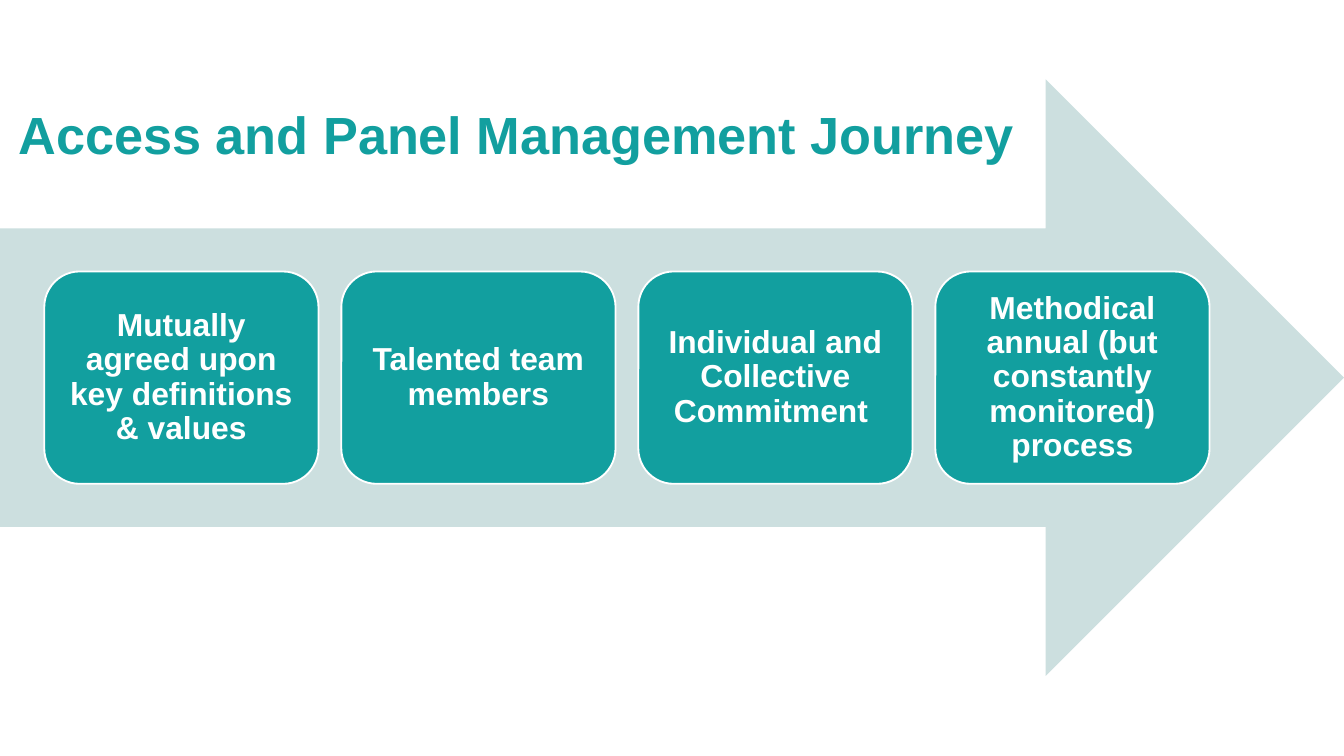
from pptx import Presentation
from pptx.dml.color import RGBColor
from pptx.enum import shapes, text
from pptx.util import Inches, Pt

TEAL = RGBColor(0x12, 0x9F, 0x9F)
PALE_TEAL = RGBColor(0xCC, 0xDF, 0xDF)
WHITE = RGBColor(0xFF, 0xFF, 0xFF)
FONT = "Arial"
SLIDE_WIDTH = 10
SLIDE_HEIGHT = SLIDE_WIDTH * 9 / 16

STEPS = [
    "Mutually agreed upon key definitions & values",
    "Talented team members",
    "Individual and Collective Commitment ",
    "Methodical annual (but constantly monitored) process",
]


def add_bold_run(paragraph, content, size, color):
    run = paragraph.add_run()
    run.text = content
    run.font.name = FONT
    run.font.size = Pt(size)
    run.font.bold = True
    run.font.color.rgb = color


def add_title(slide, left, top, width, height):
    box = slide.shapes.add_textbox(
        Inches(left), Inches(top), Inches(width), Inches(height))
    box.text_frame.word_wrap = True
    add_bold_run(box.text_frame.paragraphs[0],
                 "Access and Panel Management Journey", 28, TEAL)


def add_step(slide, content, left, top, width, height):
    card = slide.shapes.add_shape(
        shapes.MSO_SHAPE.ROUNDED_RECTANGLE,
        Inches(left), Inches(top), Inches(width), Inches(height))
    card.shadow.inherit = False
    card.fill.solid()
    card.fill.fore_color.rgb = TEAL
    card.line.color.rgb = WHITE
    card.line.width = Pt(1)

    frame = card.text_frame
    frame.word_wrap = True
    frame.vertical_anchor = text.MSO_ANCHOR.MIDDLE
    frame.margin_left = frame.margin_right = Inches(0.07)
    frame.margin_top = frame.margin_bottom = Inches(0.07)
    paragraph = frame.paragraphs[0]
    paragraph.alignment = text.PP_ALIGN.CENTER
    paragraph.line_spacing = 0.9
    add_bold_run(paragraph, content, 17, WHITE)


def add_journey(slide, left, top, width, height):
    # Background arrow
    arrow = slide.shapes.add_shape(
        shapes.MSO_SHAPE.RIGHT_ARROW,
        Inches(left), Inches(top), Inches(width), Inches(height))
    arrow.shadow.inherit = False
    arrow.fill.solid()
    arrow.fill.fore_color.rgb = PALE_TEAL
    arrow.line.fill.background()

    # Evenly spaced steps, centred vertically on the arrow
    card_width, card_height, pitch = 2.04, 1.58, 2.21
    card_top = top + (height - card_height) / 2
    for index, content in enumerate(STEPS):
        add_step(slide, content, left + 0.33 + index * pitch, card_top,
                 card_width, card_height)


def main():
    presentation = Presentation()
    presentation.slide_width = Inches(SLIDE_WIDTH)
    presentation.slide_height = Inches(SLIDE_HEIGHT)
    slide = presentation.slides.add_slide(presentation.slide_layouts[6])
    add_journey(slide, 0, 0.59, SLIDE_WIDTH, 4.44)
    add_title(slide, 0.04, 0.71, 8.27, 0.88)
    presentation.save("out.pptx")


if __name__ == "__main__":
    main()
